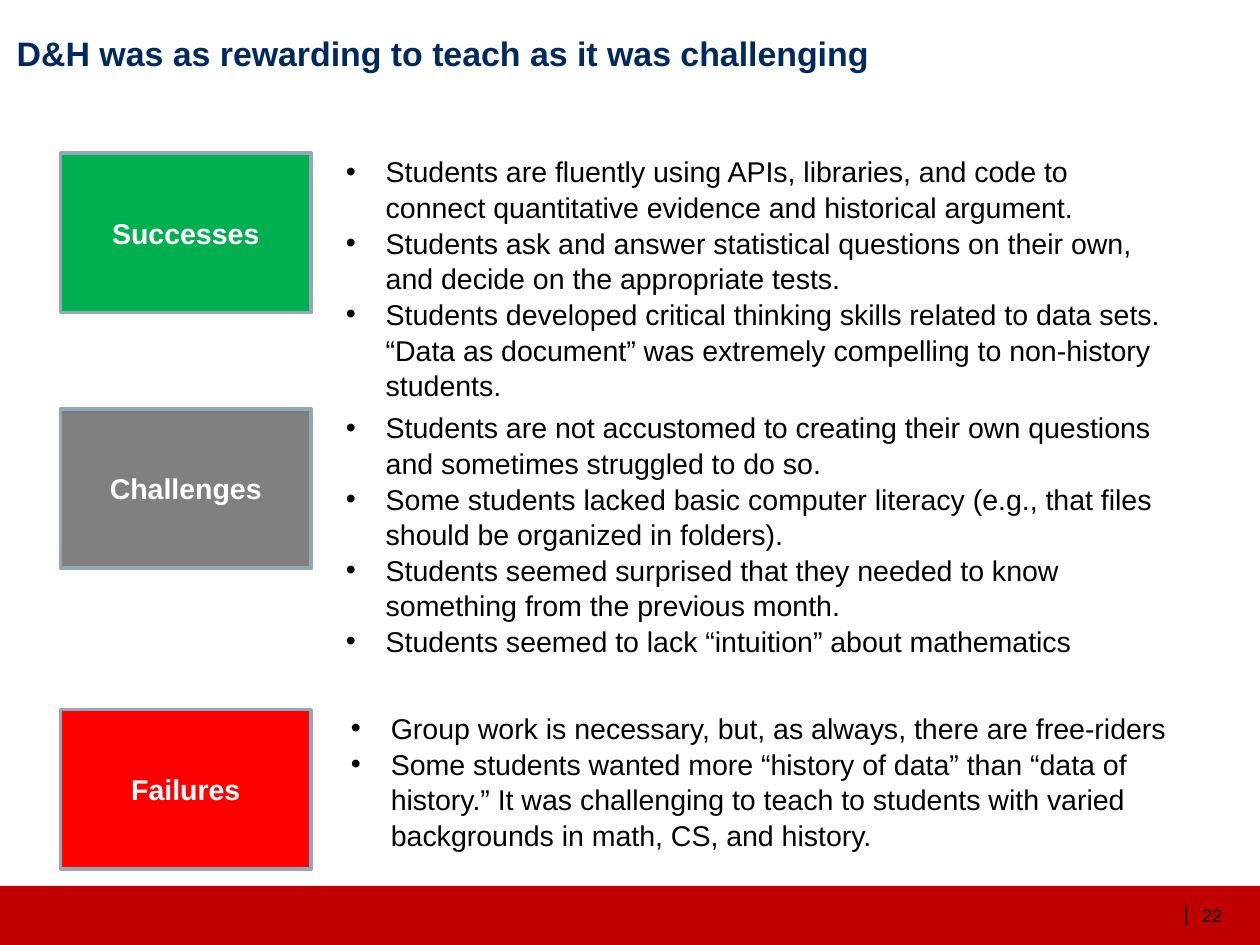
from dataclasses import dataclass

from lxml import etree
from pptx import Presentation
from pptx.dml.color import RGBColor
from pptx.enum.shapes import MSO_SHAPE
from pptx.enum.text import MSO_ANCHOR, MSO_AUTO_SIZE, PP_ALIGN
from pptx.oxml.ns import qn
from pptx.shapes.base import BaseShape
from pptx.slide import Slide
from pptx.util import Inches, Pt

RECTANGLE = MSO_SHAPE.RECTANGLE
LEFT, CENTER, RIGHT = PP_ALIGN.LEFT, PP_ALIGN.CENTER, PP_ALIGN.RIGHT
TOP, MIDDLE = MSO_ANCHOR.TOP, MSO_ANCHOR.MIDDLE
NO_AUTOFIT = MSO_AUTO_SIZE.NONE
COMPARISON_LAYOUT = 4

Box = tuple[float, float, float, float]


@dataclass(frozen=True)
class Theme:
    font: str = "Arial"
    title_size: float = 19
    body_size: float = 16
    divider_size: float = 12
    number_size: float = 10
    title: str = "002960"
    text: str = "000000"
    label: str = "FFFFFF"
    outline: str = "93A6BA"
    footer: str = "C00000"
    success: str = "00B050"
    challenge: str = "808080"
    failure: str = "FF0000"


@dataclass(frozen=True)
class Section:
    label: str
    color: str
    top: float
    list_left: float
    list_height: float
    points: list[str]


THEME = Theme()
SLIDE_WIDTH, SLIDE_HEIGHT = 9.8, 7.35
FOOTER_TOP = 6.89
LABEL_LEFT, LABEL_WIDTH, LABEL_HEIGHT = 0.47, 1.95, 1.24
LIST_WIDTH = 6.38
BULLET_INDENT = 0.31
LIST_LINE_SPACING = 1.04

SECTIONS = [
    Section("Successes", THEME.success, 1.19, 2.69, 1.88, [
        "Students are fluently using APIs, libraries, and code to connect "
        "quantitative evidence and historical argument.",
        "Students ask and answer statistical questions on their own, and decide "
        "on the appropriate tests.",
        "Students developed critical thinking skills related to data sets. "
        "“Data as document” was extremely compelling to non-history students.",
    ]),
    Section("Challenges", THEME.challenge, 3.18, 2.69, 1.88, [
        "Students are not accustomed to creating their own questions and "
        "sometimes struggled to do so.",
        "Some students lacked basic computer literacy (e.g., that files should "
        "be organized in folders).",
        "Students seemed surprised that they needed to know something from the "
        "previous month.",
        "Students seemed to lack “intuition” about mathematics",
    ]),
    Section("Failures", THEME.failure, 5.52, 2.73, 1.08, [
        "Group work is necessary, but, as always, there are free-riders",
        "Some students wanted more “history of data” than “data of history.” "
        "It was challenging to teach to students with varied backgrounds in "
        "math, CS, and history.",
    ]),
]


def place(shape: BaseShape, box: Box) -> None:
    shape.left, shape.top, shape.width, shape.height = map(Inches, box)


def add_bullet(paragraph) -> None:
    properties = paragraph._p.get_or_add_pPr()
    properties.set("marL", str(Inches(BULLET_INDENT)))
    properties.set("indent", str(-Inches(BULLET_INDENT)))
    etree.SubElement(properties, qn("a:buFont")).set("typeface", THEME.font)
    etree.SubElement(properties, qn("a:buChar")).set("char", "•")


def write_text(shape: BaseShape, texts: list[str], *, size: float = THEME.body_size,
               color: str = THEME.text, bold: bool = False, align: PP_ALIGN = LEFT,
               anchor: MSO_ANCHOR = TOP, wrap: bool = True, bullets: bool = False,
               line_spacing: float = 1.0) -> None:
    frame = shape.text_frame
    frame.auto_size = NO_AUTOFIT
    frame.word_wrap = wrap
    frame.vertical_anchor = anchor
    frame.margin_left = frame.margin_right = 0
    frame.margin_top = frame.margin_bottom = 0
    for index, text in enumerate(texts):
        paragraph = frame.add_paragraph() if index else frame.paragraphs[0]
        if bullets:
            add_bullet(paragraph)
        paragraph.alignment = align
        paragraph.line_spacing = line_spacing
        paragraph.space_before = paragraph.space_after = Pt(0)
        run = paragraph.add_run()
        run.text = text
        run.font.name = THEME.font
        run.font.size = Pt(size)
        run.font.bold = bold
        run.font.color.rgb = RGBColor.from_string(color)


def add_rectangle(slide: Slide, box: Box, fill: str,
                  outline: str | None = None) -> BaseShape:
    shape = slide.shapes.add_shape(RECTANGLE, *map(Inches, box))
    shape.shadow.inherit = False
    shape.fill.solid()
    shape.fill.fore_color.rgb = RGBColor.from_string(fill)
    if outline:
        shape.line.color.rgb = RGBColor.from_string(outline)
        shape.line.width = Pt(2)
    else:
        shape.line.fill.background()
    return shape


def add_footer(slide: Slide) -> None:
    add_rectangle(slide, (0, FOOTER_TOP, SLIDE_WIDTH, SLIDE_HEIGHT - FOOTER_TOP),
                  THEME.footer)
    divider = slide.shapes.add_textbox(*map(Inches, (9.21, 7, 0.04, 0.2)))
    write_text(divider, ["|"], size=THEME.divider_size, align=RIGHT,
               anchor=MIDDLE, wrap=False)
    number = slide.shapes.add_textbox(*map(Inches, (9.35, 7.04, 0.21, 0.17)))
    write_text(number, ["22"], size=THEME.number_size, wrap=False)


def add_section(slide: Slide, section: Section, body: BaseShape) -> None:
    label = add_rectangle(slide, (LABEL_LEFT, section.top, LABEL_WIDTH, LABEL_HEIGHT),
                          section.color, THEME.outline)
    write_text(label, [section.label], color=THEME.label, bold=True,
               align=CENTER, anchor=MIDDLE)
    place(body, (section.list_left, section.top, LIST_WIDTH, section.list_height))
    write_text(body, section.points, bullets=True, line_spacing=LIST_LINE_SPACING)


def main() -> None:
    presentation = Presentation()
    presentation.slide_width = Inches(SLIDE_WIDTH)
    presentation.slide_height = Inches(SLIDE_HEIGHT)
    slide = presentation.slides.add_slide(presentation.slide_layouts[COMPARISON_LAYOUT])
    title, *bodies = slide.placeholders

    add_footer(slide)
    place(title, (0.13, 0.25, 9.43, 0.32))
    write_text(title, ["D&H was as rewarding to teach as it was challenging"],
               size=THEME.title_size, color=THEME.title, bold=True)
    for section, body in zip(SECTIONS, bodies):
        add_section(slide, section, body)
    for unused in bodies[len(SECTIONS):]:
        unused.element.getparent().remove(unused.element)
    presentation.save("out.pptx")


if __name__ == "__main__":
    main()
